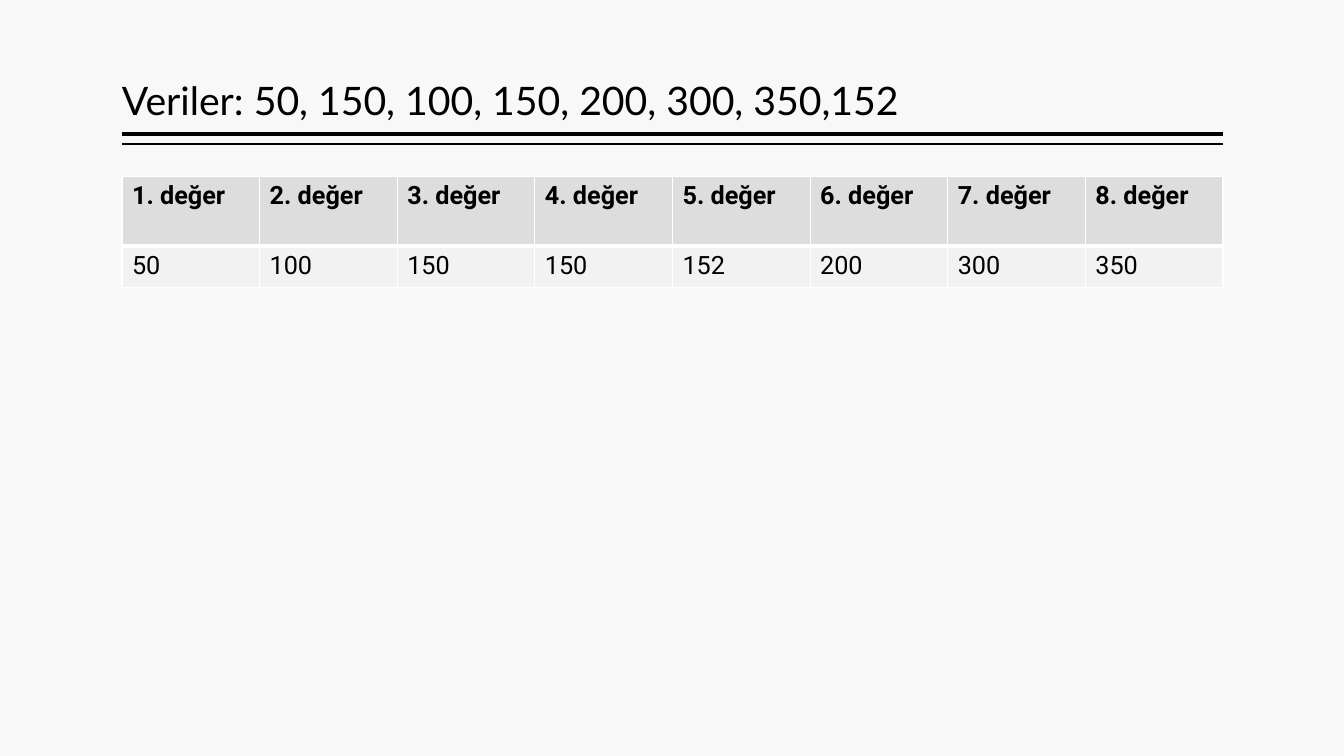
from dataclasses import dataclass
from lxml import etree
from pptx import Presentation
from pptx.dml.color import RGBColor
from pptx.enum.shapes import MSO_CONNECTOR
from pptx.enum.text import MSO_ANCHOR
from pptx.oxml.ns import qn
from pptx.util import Inches, Pt

LINE = MSO_CONNECTOR.STRAIGHT
BOTTOM = MSO_ANCHOR.BOTTOM

TITLE = "Veriler: 50, 150, 100, 150, 200, 300, 350,152"
VALUES = [50, 100, 150, 150, 152, 200, 300, 350]
ROWS = [
    [f"{n}. değer" for n in range(1, len(VALUES) + 1)],
    [str(value) for value in VALUES],
]
RULES = [(1.33, 3), (1.43, 1)]


@dataclass(frozen=True)
class Theme:
    back: str = "F8F8F8"
    ink: str = "000000"
    edge: str = "FFFFFF"
    fills: tuple = ("DDDDDD", "F2F2F2")
    head: str = "Lato"
    body: str = "Roboto"
    large: int = 28
    small: int = 18


THEME = Theme()
WIDTH, HEIGHT = 13.33, 7.5
LEFT = 1.21
SPAN = 10.92
TOP = 1.75
TALL = (0.69, 0.41)


def paint(fill, color):
    fill.solid()
    fill.fore_color.rgb = RGBColor.from_string(color)


def write(para, text, face, size, bold=False):
    run = para.add_run()
    run.text = text
    run.font.name = face
    run.font.size = Pt(size)
    run.font.bold = bold
    run.font.color.rgb = RGBColor.from_string(THEME.ink)


def edge(cell, widths):
    props = cell._tc.get_or_add_tcPr()
    for spot, (side, width) in enumerate(widths.items()):
        line = etree.Element(qn(f"a:ln{side}"), w=str(Pt(width)))
        fill = etree.SubElement(line, qn("a:solidFill"))
        etree.SubElement(fill, qn("a:srgbClr"), val=THEME.edge)
        props.insert(spot, line)


def add_title(slide):
    box = slide.shapes.add_textbox(
        Inches(LEFT), Inches(0.08), Inches(SPAN), Inches(1.2))
    frame = box.text_frame
    frame.word_wrap = True
    frame.vertical_anchor = BOTTOM
    frame.margin_left = frame.margin_right = 0
    para = frame.paragraphs[0]
    para.line_spacing = 0.9
    write(para, TITLE, THEME.head, THEME.large)


def add_rules(slide):
    for top, width in RULES:
        rule = slide.shapes.add_connector(
            LINE, Inches(LEFT + SPAN), Inches(top), Inches(LEFT), Inches(top))
        rule.line.width = Pt(width)
        paint(rule.line.fill, THEME.ink)
        etree.SubElement(rule._element.spPr, qn("a:effectLst"))


def add_grid(slide):
    count = len(VALUES)
    grid = slide.shapes.add_table(
        len(ROWS), count, Inches(LEFT), Inches(TOP),
        Inches(SPAN), Inches(sum(TALL))).table
    grid.horz_banding = False
    for col in grid.columns:
        col.width = Inches(SPAN / count)
    for r, texts in enumerate(ROWS):
        grid.rows[r].height = Inches(TALL[r])
        first = r == 0
        widths = {"L": 1, "R": 1, "T": 1 if first else 3, "B": 3 if first else 1}
        for c, text in enumerate(texts):
            cell = grid.cell(r, c)
            paint(cell.fill, THEME.fills[r])
            edge(cell, widths)
            write(cell.text_frame.paragraphs[0], text,
                  THEME.body, THEME.small, first)


def main():
    deck = Presentation()
    deck.slide_width = Inches(WIDTH)
    deck.slide_height = Inches(HEIGHT)
    slide = deck.slides.add_slide(deck.slide_layouts[6])
    paint(slide.background.fill, THEME.back)
    add_rules(slide)
    add_title(slide)
    add_grid(slide)
    deck.save("out.pptx")


if __name__ == "__main__":
    main()
